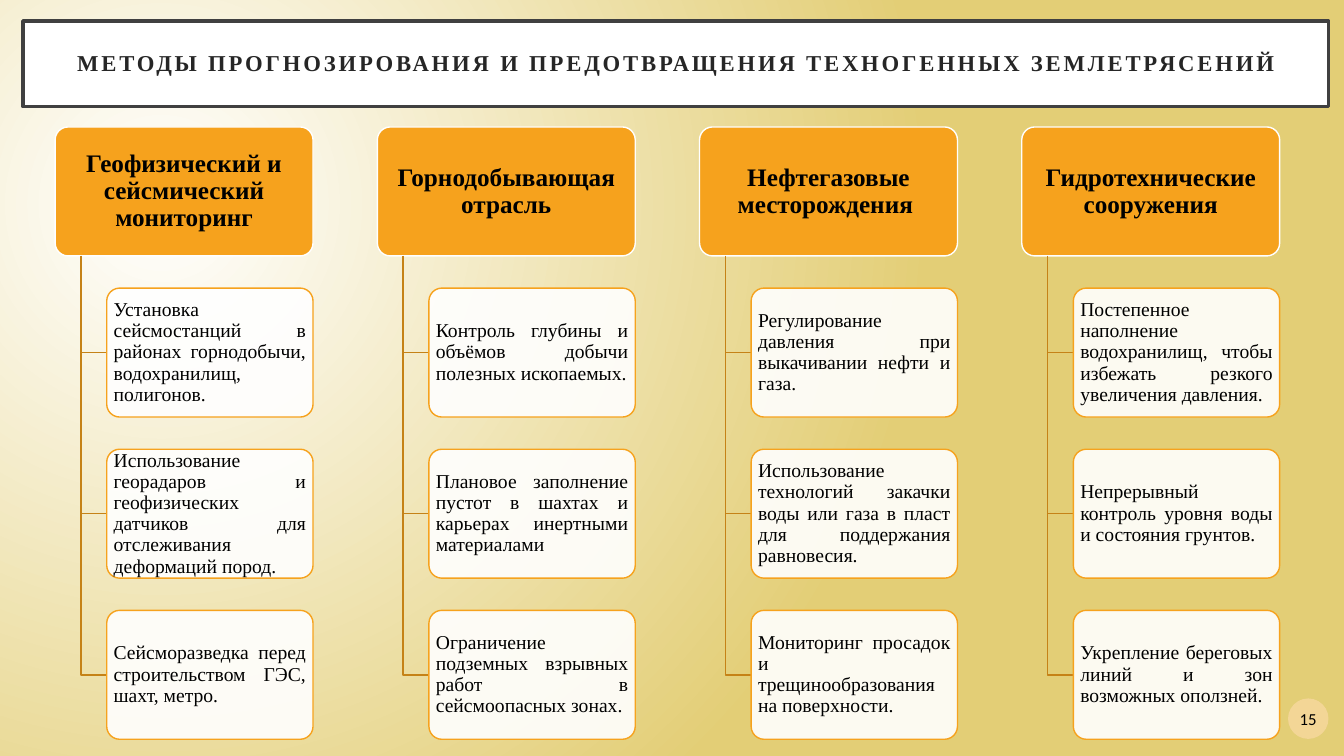
from lxml.etree import SubElement
from pptx import Presentation
from pptx.dml.color import RGBColor
from pptx.enum.shapes import MSO_SHAPE
from pptx.enum.text import MSO_ANCHOR, PP_ALIGN
from pptx.oxml.ns import qn
from pptx.util import Cm, Pt

COLORS = {
    "white": "FFFFFF",
    "sand": "E3CE76",
    "frame": "404040",
    "title": "262626",
    "text": "000000",
    "orange": "F6A21D",
    "branch": "C58217",
    "badge": "FBDAA5",
}
SERIF = "Times New Roman"

TITLE = "МЕТОДЫ ПРОГНОЗИРОВАНИЯ И ПРЕДОТВРАЩЕНИЯ ТЕХНОГЕННЫХ ЗЕМЛЕТРЯСЕНИЙ"
COLUMNS = [
    ("Геофизический и сейсмический мониторинг", [
        "Установка сейсмостанций в районах горнодобычи, водохранилищ, полигонов.",
        "Использование георадаров и геофизических датчиков для отслеживания деформаций пород.",
        "Сейсморазведка перед строительством ГЭС, шахт, метро.",
    ]),
    ("Горнодобывающая отрасль", [
        "Контроль глубины и объёмов добычи полезных ископаемых.",
        "Плановое заполнение пустот в шахтах и карьерах инертными материалами",
        "Ограничение подземных взрывных работ в сейсмоопасных зонах.",
    ]),
    ("Нефтегазовые месторождения ", [
        "Регулирование давления при выкачивании нефти и газа.",
        "Использование технологий закачки воды или газа в пласт для поддержания равновесия.",
        "Мониторинг просадок и трещинообразования на поверхности.",
    ]),
    ("Гидротехнические сооружения", [
        "Постепенное наполнение водохранилищ, чтобы избежать резкого увеличения давления.",
        "Непрерывный контроль уровня воды и состояния грунтов.",
        "Укрепление береговых линий и зон возможных оползней.",
    ]),
]

COLUMN_LEFT, COLUMN_PITCH = 1.39, 8.12
HEADER_TOP, HEADER_WIDTH, BOX_HEIGHT = 3.2, 6.5, 3.25
METHOD_TOP, METHOD_PITCH = 7.26, 4.06
METHOD_INDENT, TRUNK_INDENT = 1.3, 0.65


def rgb(name):
    return RGBColor.from_string(COLORS[name])


def paint_background(slide):
    fill = slide.background.fill
    fill.gradient()
    for stop, name in zip(fill.gradient_stops, ("white", "sand")):
        stop.color.rgb = rgb(name)
    gradient = slide.element.find(".//" + qn("a:gradFill"))
    gradient.remove(gradient.find(qn("a:lin")))
    circle = SubElement(gradient, qn("a:path"), {"path": "circle"})
    SubElement(circle, qn("a:fillToRect"), l="50000", t="55000", r="125000", b="100000")


def add_box(slide, kind, left, top, width, height, fill, opacity=100, line=None, line_width=1):
    shape = slide.shapes.add_shape(kind, Cm(left), Cm(top), Cm(width), Cm(height))
    shape.shadow.inherit = False
    shape.fill.solid()
    shape.fill.fore_color.rgb = rgb(fill)
    if opacity < 100:
        color = shape.element.spPr.find(qn("a:solidFill"))[0]
        SubElement(color, qn("a:alpha"), val=str(opacity * 1000))
    if line:
        shape.line.color.rgb = rgb(line)
        shape.line.width = Pt(line_width)
    else:
        shape.line.fill.background()
    return shape


def write_text(shape, text, size, margins, alignment=PP_ALIGN.CENTER, font=SERIF,
               color="text", bold=False, line_spacing=0.9):
    frame = shape.text_frame
    frame.text = text
    frame.word_wrap = True
    frame.vertical_anchor = MSO_ANCHOR.MIDDLE
    frame.margin_left = frame.margin_right = Cm(margins[0])
    frame.margin_top = frame.margin_bottom = Cm(margins[1])
    paragraph = frame.paragraphs[0]
    paragraph.alignment = alignment
    paragraph.line_spacing = line_spacing
    run = paragraph.runs[0]
    run.font.name = font
    run.font.size = Pt(size)
    run.font.bold = bold
    run.font.color.rgb = rgb(color)
    return run


def add_title(slide):
    shape = add_box(slide, MSO_SHAPE.RECTANGLE, 0.58, 0.53, 32.9, 2.16,
                    "white", line="frame", line_width=2.5)
    run = write_text(shape, TITLE, 16.2, (0.5, 0.5), color="title", bold=True)
    run.font.element.set("spc", "200") if hasattr(run.font, "element") else run._r.get_or_add_rPr().set("spc", "200")


def add_branch(slide, trunk, top, end, bottom):
    builder = slide.shapes.build_freeform(Cm(trunk), Cm(top))
    builder.add_line_segments([(Cm(trunk), Cm(bottom)), (Cm(end), Cm(bottom))], close=False)
    shape = builder.convert_to_shape()
    shape.shadow.inherit = False
    shape.fill.background()
    shape.line.color.rgb = rgb("branch")
    shape.line.width = Pt(1)


def add_header(slide, left, text):
    shape = add_box(slide, MSO_SHAPE.ROUNDED_RECTANGLE, left, HEADER_TOP,
                    HEADER_WIDTH, BOX_HEIGHT, "orange", line="white")
    shape.adjustments[0] = 0.1
    write_text(shape, text, 18, (0.1, 0.06), bold=True)


def add_method(slide, left, top, text):
    shape = add_box(slide, MSO_SHAPE.ROUNDED_RECTANGLE, left, top,
                    HEADER_WIDTH - METHOD_INDENT, BOX_HEIGHT, "white", 90, "orange")
    shape.adjustments[0] = 0.1
    write_text(shape, text, 14, (0.08, 0.05), PP_ALIGN.JUSTIFY)


def add_column(slide, left, header, methods):
    add_header(slide, left, header)
    for row, method in enumerate(methods):
        top = METHOD_TOP + row * METHOD_PITCH
        add_branch(slide, left + TRUNK_INDENT, HEADER_TOP + BOX_HEIGHT,
                   left + METHOD_INDENT, top + BOX_HEIGHT / 2)
        add_method(slide, left + METHOD_INDENT, top, method)


def add_page_number(slide):
    shape = add_box(slide, MSO_SHAPE.OVAL, 32.46, 17.6, 1.02, 1.02, "badge", 70)
    write_text(shape, "15", 12, (0.05, 0.13), font="Calibri", line_spacing=1.0)


def main():
    presentation = Presentation()
    presentation.slide_width = Cm(33.87)
    presentation.slide_height = Cm(19.05)
    slide = presentation.slides.add_slide(presentation.slide_layouts[6])
    paint_background(slide)
    add_title(slide)
    for index, (header, methods) in enumerate(COLUMNS):
        add_column(slide, COLUMN_LEFT + index * COLUMN_PITCH, header, methods)
    add_page_number(slide)
    presentation.save("out.pptx")


if __name__ == "__main__":
    main()
